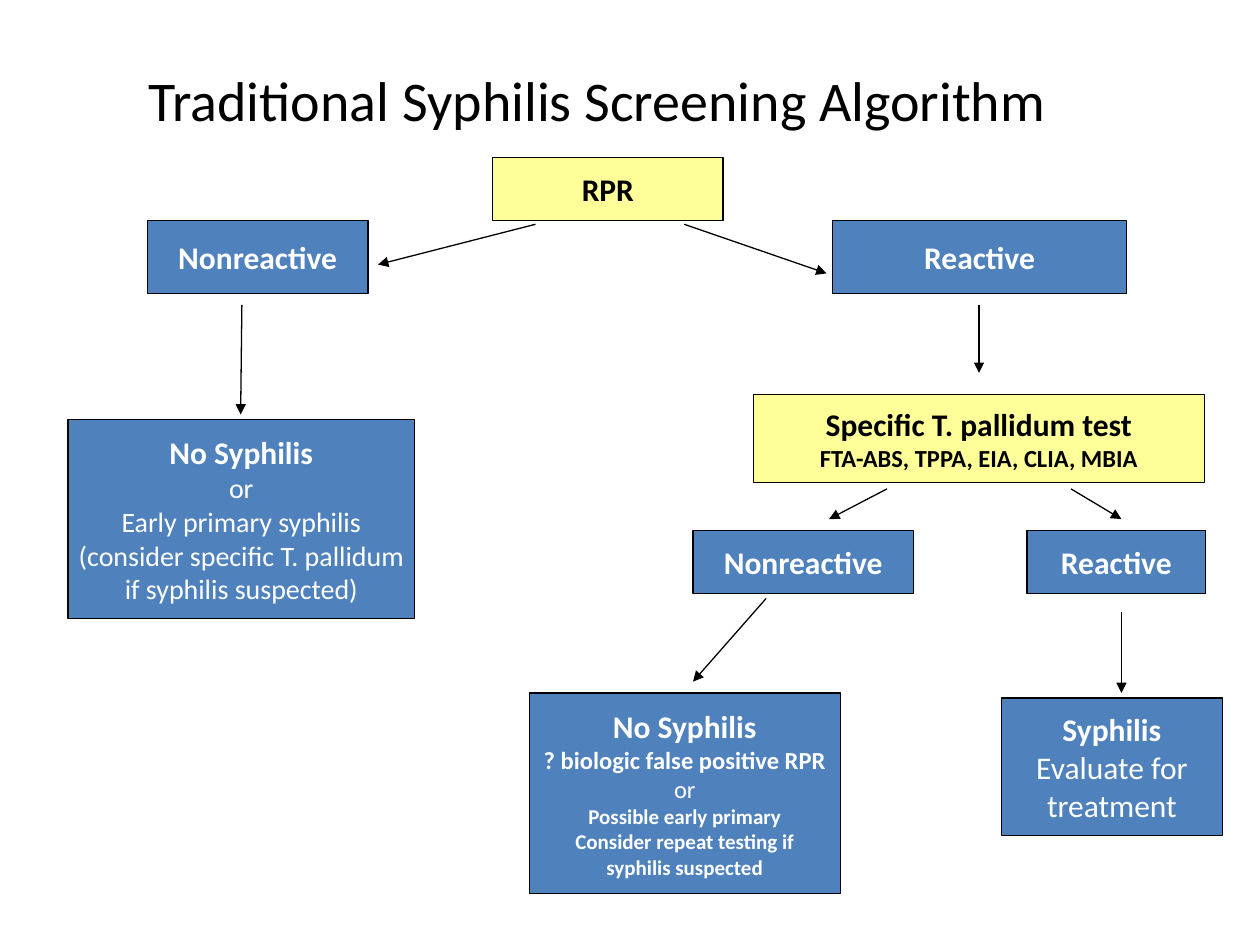
from dataclasses import dataclass

from lxml.etree import SubElement
from pptx import Presentation
from pptx.dml.color import RGBColor
from pptx.enum.shapes import MSO_CONNECTOR, MSO_SHAPE
from pptx.enum.text import MSO_ANCHOR, PP_ALIGN
from pptx.oxml.ns import qn
from pptx.util import Inches, Pt

FONT = "Calibri"
BLACK, WHITE = "000000", "FFFFFF"
TEST_FILL, RESULT_FILL = "FFFF99", "4F81BD"


@dataclass
class Line:
    text: str
    size: int = 18
    bold: bool = True


@dataclass
class Box:
    left: float
    top: float
    width: float
    height: float
    lines: list[Line]
    fill: str = RESULT_FILL
    text_color: str = WHITE


@dataclass
class Arrow:
    start: tuple[float, float]
    end: tuple[float, float]


def color(hex_value: str) -> RGBColor:
    return RGBColor.from_string(hex_value)


def write_lines(frame, lines: list[Line], text_color: str, align) -> None:
    frame.text = "\n".join(line.text for line in lines)
    frame.vertical_anchor = MSO_ANCHOR.MIDDLE
    for paragraph, line in zip(frame.paragraphs, lines):
        paragraph.alignment = align
        font = paragraph.runs[0].font
        font.name, font.size, font.bold = FONT, Pt(line.size), line.bold
        font.color.rgb = color(text_color)


def draw_box(slide, box: Box) -> None:
    shape = slide.shapes.add_shape(
        MSO_SHAPE.RECTANGLE, Inches(box.left), Inches(box.top),
        Inches(box.width), Inches(box.height))
    shape.shadow.inherit = False
    shape.fill.solid()
    shape.fill.fore_color.rgb = color(box.fill)
    shape.line.color.rgb = color(BLACK)
    shape.line.width = Pt(0.75)
    shape.text_frame.word_wrap = False
    write_lines(shape.text_frame, box.lines, box.text_color, PP_ALIGN.CENTER)


def draw_arrow(slide, arrow: Arrow) -> None:
    connector = slide.shapes.add_connector(
        MSO_CONNECTOR.STRAIGHT, *map(Inches, arrow.start + arrow.end))
    connector.line.color.rgb = color(BLACK)
    connector.line.width = Pt(0.75)
    SubElement(connector.line._get_or_add_ln(), qn("a:tailEnd"), type="triangle")
    SubElement(connector._element.spPr, qn("a:effectLst"))


BOXES = [
    # Screening test and its results
    Box(3.91, 1.25, 1.83, 0.5, [Line("RPR")], TEST_FILL, BLACK),
    Box(1.17, 1.75, 1.75, 0.58, [Line("Nonreactive")]),
    Box(6.61, 1.75, 2.33, 0.58, [Line("Reactive")]),
    # Outcome of a nonreactive screen
    Box(0.54, 3.33, 2.75, 1.58, [
        Line("No Syphilis"),
        Line("or", 16, False),
        Line("Early primary syphilis", 16, False),
        Line("(consider specific T. pallidum", 16, False),
        Line("if syphilis suspected)", 16, False),
    ]),
    # Confirmatory test and its results
    Box(5.98, 3.13, 3.58, 0.7, [
        Line("Specific T. pallidum test"),
        Line("FTA-ABS, TPPA, EIA, CLIA, MBIA", 14),
    ], TEST_FILL, BLACK),
    Box(5.5, 4.21, 1.75, 0.5, [Line("Nonreactive")]),
    Box(8.15, 4.21, 1.42, 0.5, [Line("Reactive")]),
    # Final outcomes
    Box(4.2, 5.5, 2.47, 1.59, [
        Line("No Syphilis"),
        Line("? biologic false positive RPR", 14),
        Line("or", 14, False),
        Line("Possible early primary", 12),
        Line("Consider repeat testing if", 12),
        Line("syphilis suspected", 12),
    ]),
    Box(7.95, 5.54, 1.75, 1.09, [
        Line("Syphilis"),
        Line("Evaluate for", bold=False),
        Line("treatment", bold=False),
    ]),
]

ARROWS = [
    # From the screening test
    Arrow((4.25, 1.78), (3, 2.1)),
    Arrow((5.43, 1.78), (6.56, 2.17)),
    Arrow((1.92, 2.42), (1.91, 3.29)),
    Arrow((7.77, 2.42), (7.77, 2.96)),
    # From the confirmatory test
    Arrow((7.04, 3.88), (6.58, 4.12)),
    Arrow((8.5, 3.88), (8.9, 4.12)),
    Arrow((6.08, 4.75), (5.5, 5.41)),
    Arrow((8.9, 4.86), (8.9, 5.5)),
]


def main() -> None:
    presentation = Presentation()
    presentation.slide_width, presentation.slide_height = Inches(10), Inches(7.5)
    slide = presentation.slides.add_slide(presentation.slide_layouts[6])

    # Title
    title = slide.shapes.add_textbox(
        Inches(1.08), Inches(0), Inches(8.58), Inches(1.57))
    title.text_frame.word_wrap = True
    write_lines(title.text_frame,
                [Line("Traditional Syphilis Screening Algorithm", 32, False)],
                BLACK, PP_ALIGN.LEFT)

    # Flowchart
    for box in BOXES:
        draw_box(slide, box)
    for arrow in ARROWS:
        draw_arrow(slide, arrow)

    presentation.save("out.pptx")


if __name__ == "__main__":
    main()
